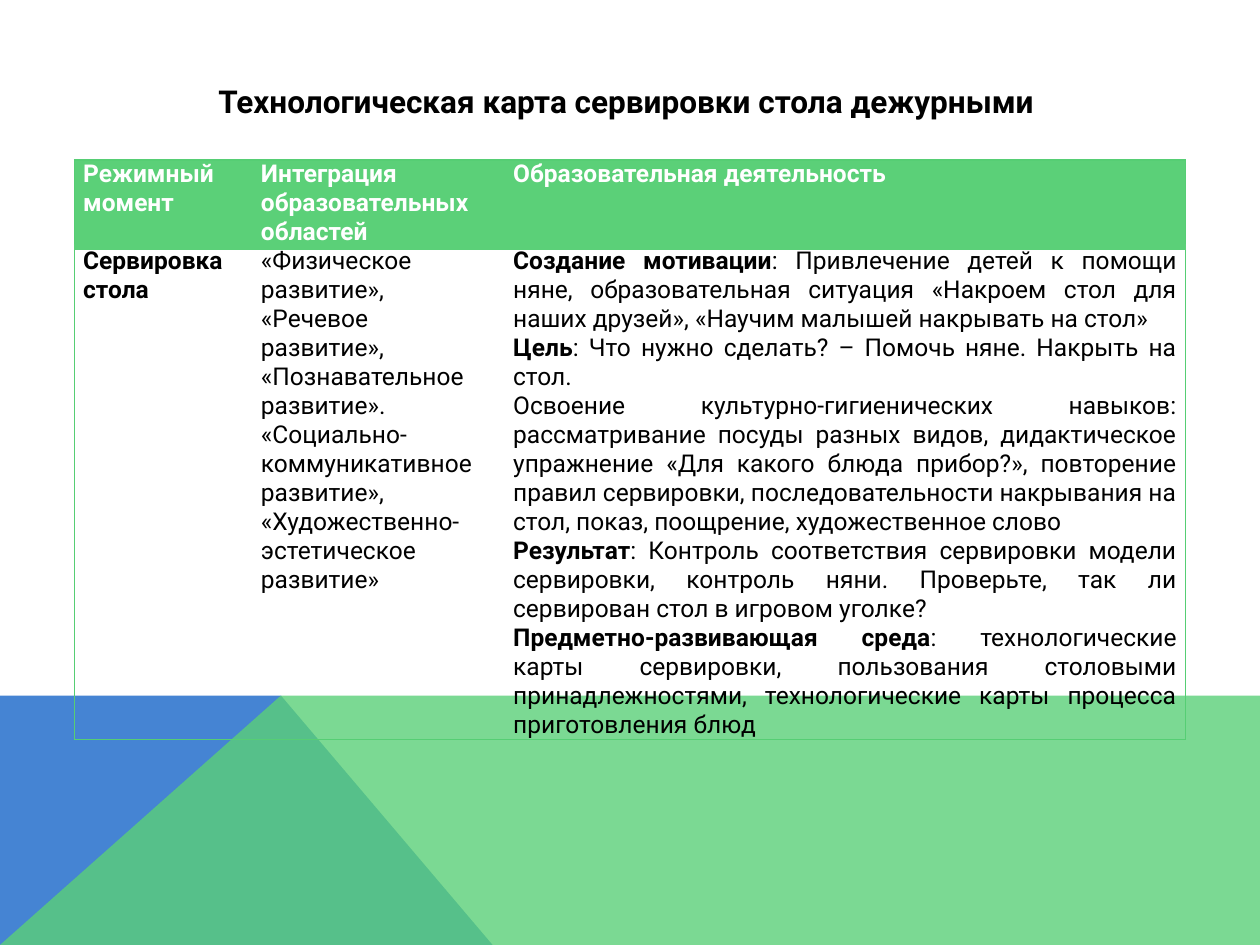
import dataclasses

import pptx
import pptx.dml.color
import pptx.enum.text
import pptx.oxml
import pptx.oxml.ns
import pptx.util
from lxml import etree

PP_ALIGN = pptx.enum.text.PP_ALIGN


@dataclasses.dataclass(frozen=True)
class Theme:
    font: str = "Roboto"
    title_size: int = 18
    body_size: int = 14
    ink: str = "000000"
    paper: str = "FFFFFF"
    blue: str = "4584D3"
    green: str = "5BD078"
    border: str = "56CE74"


THEME = Theme()
NO_GRID_STYLE = "{2D5ABB26-0587-4C30-8999-92F81FD0307C}"

TITLE = "Технологическая карта сервировки стола дежурными"
HEADINGS = ["Режимный момент", "Интеграция образовательных областей",
            "Образовательная деятельность"]
MOMENT = "Сервировка стола"
AREAS = ("«Физическое развитие», «Речевое развитие», «Познавательное развитие». "
         "«Социально-коммуникативное развитие», «Художественно-эстетическое развитие»")
# Each paragraph is a bold lead-in and the plain text after it.
ACTIVITIES = [
    ("Создание мотивации",
     ": Привлечение детей к помощи няне, образовательная ситуация «Накроем стол "
     "для наших друзей», «Научим малышей накрывать на стол»"),
    ("Цель", ": Что нужно сделать? – Помочь няне. Накрыть на стол."),
    ("", "Освоение культурно-гигиенических навыков: рассматривание посуды разных "
     "видов, дидактическое упражнение «Для какого блюда прибор?», повторение правил "
     "сервировки, последовательности накрывания на стол, показ, поощрение, "
     "художественное слово"),
    ("Результат",
     ": Контроль соответствия сервировки модели сервировки, контроль няни. "
     "Проверьте, так ли сервирован стол в игровом уголке?"),
    ("Предметно-развивающая среда",
     ": технологические карты сервировки, пользования столовыми принадлежностями, "
     "технологические карты процесса приготовления блюд"),
]


def rgb(code):
    return pptx.dml.color.RGBColor.from_string(code)


def inches(*lengths):
    return [pptx.util.Inches(length) for length in lengths]


def style_run(run, size, color, bold):
    run.font.name = THEME.font
    run.font.size = pptx.util.Pt(size)
    run.font.color.rgb = rgb(color)
    run.font.bold = bold


def add_band(slide, box, corners, color, opacity=100):
    """Fill a polygon whose corners are shares of the box."""
    left, top, width, height = box
    points = [inches(left + x * width, top + y * height) for x, y in corners]
    builder = slide.shapes.build_freeform(*points[0])
    builder.add_line_segments(points[1:], close=True)
    band = builder.convert_to_shape()
    band.shadow.inherit = False
    band.line.fill.background()
    band.fill.solid()
    band.fill.fore_color.rgb = rgb(color)
    if opacity < 100:
        tint = band.fill._xPr.find(".//" + pptx.oxml.ns.qn("a:srgbClr"))
        etree.SubElement(tint, pptx.oxml.ns.qn("a:alpha"), val=str(opacity * 1000))


def add_backdrop(slide, box):
    peak = (0.223, 0)
    add_band(slide, box, [(0, 1), (0, 0), peak, (0.391, 1)], THEME.blue)
    add_band(slide, box, [(0, 1), peak, (1, 0), (1, 1)], THEME.green, opacity=80)


def add_title(slide, box):
    title = slide.shapes.title
    title.left, title.top, title.width, title.height = inches(*box)
    frame = title.text_frame
    frame.text = TITLE
    frame.word_wrap = True
    frame.auto_size = pptx.enum.text.MSO_AUTO_SIZE.NONE
    frame.vertical_anchor = pptx.enum.text.MSO_ANCHOR.TOP
    frame.paragraphs[0].alignment = PP_ALIGN.CENTER
    style_run(frame.paragraphs[0].runs[0], THEME.title_size, THEME.ink, True)


def set_border(cell, side, color, points):
    line = pptx.oxml.parse_xml(
        f'<a:ln{side} {pptx.oxml.ns.nsdecls("a")} w="{int(points * 12700)}">'
        f'<a:solidFill><a:srgbClr val="{color}"/></a:solidFill></a:ln{side}>')
    cell._tc.get_or_add_tcPr().append(line)


def fill_cell(cell, paragraphs, color):
    """Write paragraphs of (bold lead-in, plain text) pairs, justified."""
    cell.margin_left = cell.margin_right = pptx.util.Inches(0.07)
    cell.margin_top = cell.margin_bottom = 0
    frame = cell.text_frame
    for index, parts in enumerate(paragraphs):
        paragraph = frame.add_paragraph() if index else frame.paragraphs[0]
        paragraph.alignment = PP_ALIGN.JUSTIFY
        for text, bold in zip(parts, (True, False)):
            if text:
                run = paragraph.add_run()
                run.text = text
                style_run(run, THEME.body_size, color, bold)


def add_card(slide, box, column_shares, row_shares):
    content = [[[(heading, "")] for heading in HEADINGS],
               [[(MOMENT, "")], [("", AREAS)], ACTIVITIES]]
    left, top, width, height = box
    frame = slide.shapes.add_table(len(row_shares), len(column_shares), *inches(*box))
    table = frame.table
    table.horz_banding = False
    frame._element.find(".//" + pptx.oxml.ns.qn("a:tableStyleId")).text = NO_GRID_STYLE
    for column, share in zip(table.columns, column_shares):
        column.width = pptx.util.Inches(width * share)
    for row, share in zip(table.rows, row_shares):
        row.height = pptx.util.Inches(height * share)

    last_column = len(column_shares) - 1
    for r, row in enumerate(content):
        is_header = r == 0
        for c, paragraphs in enumerate(row):
            cell = table.cell(r, c)
            fill_cell(cell, paragraphs, THEME.paper if is_header else THEME.ink)
            if c == 0:
                set_border(cell, "L", THEME.border, 0.75)
            if c == last_column:
                set_border(cell, "R", THEME.border, 0.75)
            if is_header:
                set_border(cell, "T", THEME.border, 0.75)
                cell.fill.solid()
                cell.fill.fore_color.rgb = rgb(THEME.green)
            else:
                set_border(cell, "T", THEME.green, 4)
                set_border(cell, "B", THEME.border, 0.75)
                cell.fill.background()


def main():
    deck = pptx.Presentation()
    deck.slide_width, deck.slide_height = inches(10, 7.5)
    slide = deck.slides.add_slide(deck.slide_layouts[5])
    add_backdrop(slide, (0, 5.52, 10, 1.98))
    add_card(slide, (0.59, 1.27, 8.82, 4.37),
             column_shares=(0.16, 0.227, 0.613), row_shares=(0.14, 0.86))
    add_title(slide, (1.54, 0.6, 6.86, 0.71))
    deck.save("out.pptx")


if __name__ == "__main__":
    main()
